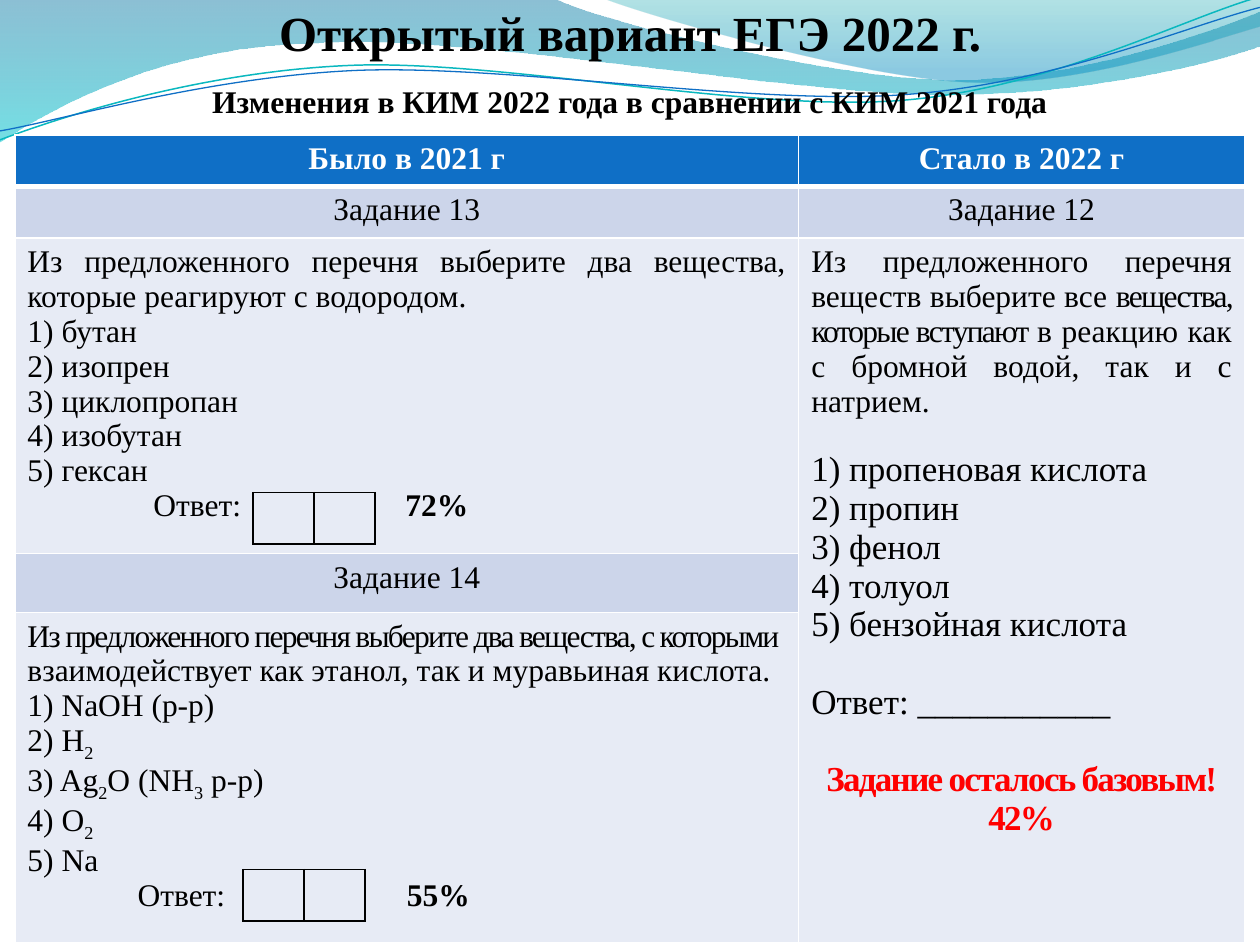
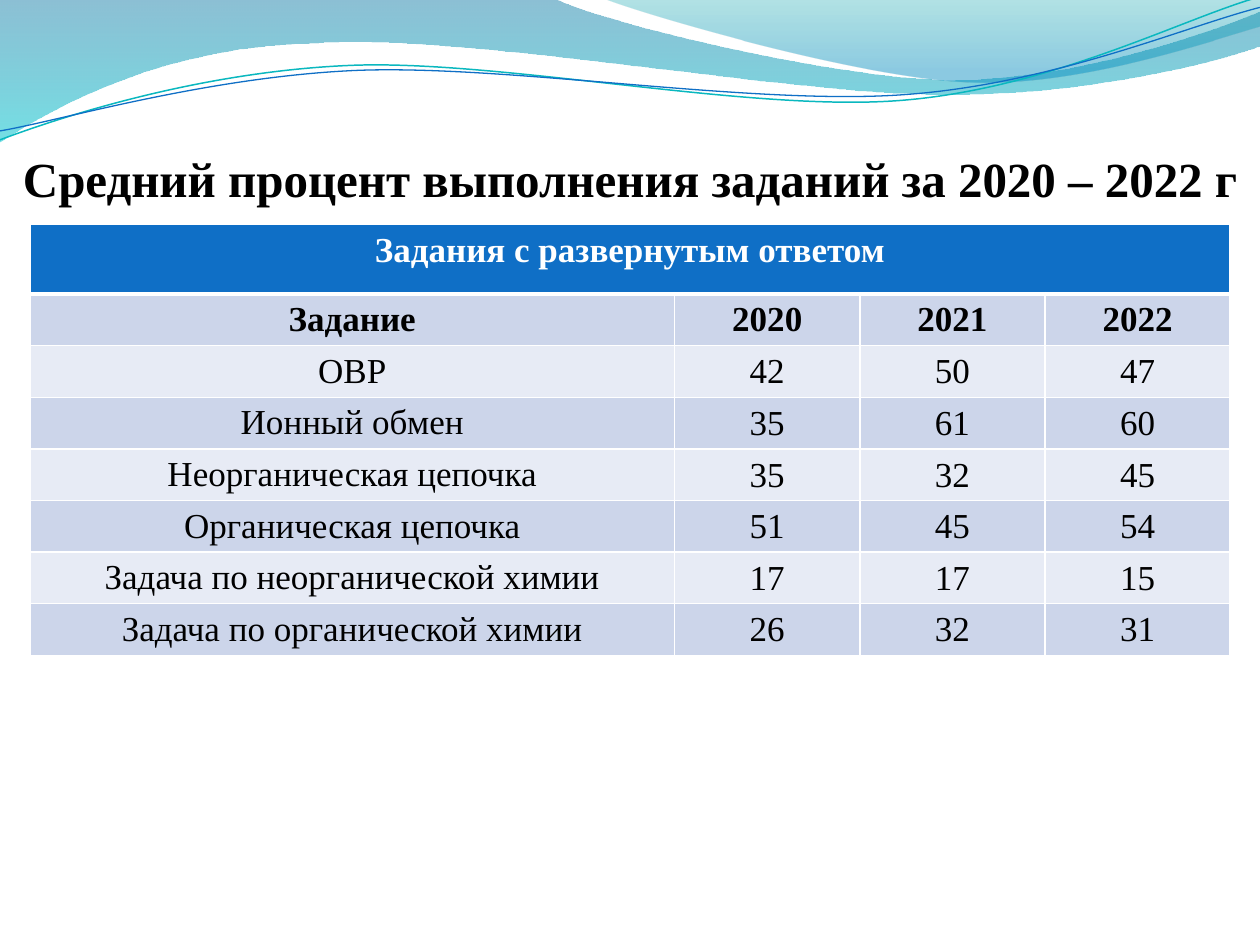
from dataclasses import dataclass

from lxml import etree
from pptx import Presentation
from pptx.dml.color import RGBColor
from pptx.enum.text import MSO_ANCHOR, MSO_AUTO_SIZE, PP_ALIGN
from pptx.oxml.ns import qn
from pptx.util import Cm, Pt

CENTER, JUSTIFY, LEFT = PP_ALIGN.CENTER, PP_ALIGN.JUSTIFY, PP_ALIGN.LEFT
TOP, MIDDLE = MSO_ANCHOR.TOP, MSO_ANCHOR.MIDDLE
NO_AUTOSIZE = MSO_AUTO_SIZE.NONE

BLACK = RGBColor(0x00, 0x00, 0x00)
WHITE = RGBColor(0xFF, 0xFF, 0xFF)
RED = RGBColor(0xFF, 0x00, 0x00)
HEADER_BLUE = RGBColor(0x0F, 0x6F, 0xC6)
BAND_DARK = RGBColor(0xCC, 0xD5, 0xEA)
BAND_LIGHT = RGBColor(0xE7, 0xEB, 0xF5)
WAVE_TEAL = RGBColor(0x0A, 0xB8, 0xBF)
FONT = "Times New Roman"
TITLE_ONLY = 5
SLIDE_WIDTH, SLIDE_HEIGHT = 25.4, 19.05

SUB = {"baseline": "-25000"}
TIGHT = {"spc": "-100"}
BOLD = {"b": "1"}

WAVE_FILLS = [
    ([(0, 0), (11.18, -0.03), (12.09, 0.43, 16.87, 1.6, 19.25, 1.6),
      (21.67, 1.6, 24.33, 0.66, 25.4, 0.23), (25.43, 0.91),
      (24.97, 1.12, 22.1, 1.93, 18.95, 1.9), (15.8, 1.9, 9.7, 0.71, 6.53, 0.86),
      (3.28, 0.91, 1.17, 2.11, -0.03, 2.87), (0, 0)],
     [(0, RGBColor(0x00, 0x74, 0xA1), 45), (1, RGBColor(0x00, 0xC6, 0xCF), 55)]),
    ([(12.17, -0.03), (12.93, 0.28, 17.32, 1.57, 19.53, 1.65),
      (21.74, 1.75, 24.41, 0.81, 25.4, 0.53), (25.4, 0), (12.17, -0.03)],
     [(0, RGBColor(0x00, 0xA1, 0xA9), 30), (0.8, RGBColor(0x00, 0x8B, 0xBF), 45)]),
]
WAVE_LINES = [
    ([(0, 2.82), (1.22, 2.36, 4.01, 1.45, 7.04, 1.32),
      (10.03, 1.19, 15.06, 2.26, 18.11, 2.03),
      (21.16, 1.8, 23.83, 0.38, 25.35, -0.05)], WAVE_TEAL, 0.85),
    ([(0, 2.64), (1.19, 2.44, 4.17, 1.55, 7.19, 1.42),
      (10.24, 1.3, 15.16, 2.13, 18.21, 1.91),
      (21.23, 1.7, 23.9, 0.53, 25.4, 0.15)], HEADER_BLUE, 0.75),
]

SCORES = [
    ("Задание", "2020", "2021", "2022"),
    ("ОВР", 42, 50, 47),
    ("Ионный обмен", 35, 61, 60),
    ("Неорганическая цепочка", 35, 32, 45),
    ("Органическая цепочка", 51, 45, 54),
    ("Задача по неорганической химии", 17, 17, 15),
    ("Задача по органической химии", 26, 32, 31),
]


@dataclass
class Box:
    """Region of a slide in centimetres."""
    left: float
    top: float
    width: float
    height: float

    def emu(self):
        """Return the four lengths for python-pptx."""
        return Cm(self.left), Cm(self.top), Cm(self.width), Cm(self.height)


@dataclass
class Line:
    """Paragraph made of plain strings and (text, attributes) runs."""
    runs: list
    align: PP_ALIGN = LEFT
    size: float = 18
    bold: bool = False
    color: RGBColor = BLACK
    before: float = 0
    after: float = 0
    tabs: tuple = ()


def write(frame, lines):
    """Fill a text frame with lines, run by run."""
    for index, line in enumerate(lines):
        paragraph = frame.add_paragraph() if index else frame.paragraphs[0]
        paragraph.alignment = line.align
        paragraph.space_before = Pt(line.before)
        paragraph.space_after = Pt(line.after)
        if line.tabs:
            stops = etree.SubElement(paragraph._p.get_or_add_pPr(), qn("a:tabLst"))
            for stop in line.tabs:
                etree.SubElement(stops, qn("a:tab"), pos=str(Cm(stop)), algn="l")
        for part in line.runs:
            text, attributes = (part, {}) if isinstance(part, str) else part
            run = paragraph.add_run()
            run.text = text
            run.font.name = FONT
            run.font.size = Pt(line.size)
            run.font.bold = line.bold
            run.font.color.rgb = line.color
            for key, value in attributes.items():
                run.font._element.set(key, value)


def add_outline(slide, segments, close):
    """Draw a wave whose six-number segments are cubic curves."""
    knots = [(Cm(x), Cm(y)) for segment in segments
             for x, y in zip(segment[::2], segment[1::2])]
    builder = slide.shapes.build_freeform(*knots[0])
    builder.add_line_segments(knots[1:], close=close)
    wave = builder.convert_to_shape()
    wave.shadow.inherit = False
    steps = iter(list(wave.element.iter(qn("a:lnTo"))))
    for segment in segments[1:]:
        first = next(steps)
        if len(segment) == 6:
            curve = etree.Element(qn("a:cubicBezTo"))
            first.addprevious(curve)
            for step in (first, next(steps), next(steps)):
                curve.append(step[0])
                step.getparent().remove(step)
    return wave


def add_waves(slide, master):
    """Draw the wave band and hand it to the master behind its placeholders."""
    waves = []
    for segments, stops in WAVE_FILLS:
        wave = add_outline(slide, segments, True)
        wave.line.fill.background()
        wave.fill.gradient()
        wave.fill.gradient_angle = 270
        for stop, (position, color, _) in zip(wave.fill.gradient_stops, stops):
            stop.position = position
            stop.color.rgb = color
        for color, (_, _, opacity) in zip(wave.element.iter(qn("a:srgbClr")), stops):
            etree.SubElement(color, qn("a:alpha"), val=str(opacity * 1000))
        waves.append(wave)
    for segments, color, width in WAVE_LINES:
        wave = add_outline(slide, segments, False)
        wave.fill.background()
        wave.line.color.rgb = color
        wave.line.width = Pt(width)
        waves.append(wave)
    for index, wave in enumerate(waves):
        wave.element.nvSpPr.cNvPr.set("id", str(100 + index))
        master.shapes.element.insert(2 + index, wave.element)


def set_title(slide, box, text):
    """Move and format the title placeholder."""
    title = slide.shapes.title
    title.left, title.top, title.width, title.height = box.emu()
    frame = title.text_frame
    frame.word_wrap = True
    frame.auto_size = NO_AUTOSIZE
    frame.vertical_anchor = TOP
    write(frame, [Line([text], CENTER, 28, True)])


def add_subtitle(slide, box, text):
    """Add the centred line under the title."""
    frame = slide.shapes.add_textbox(*box.emu()).text_frame
    frame.word_wrap = True
    write(frame, [Line([text], CENTER, bold=True, after=12)])


def set_borders(cell, color, top=1, bottom=1):
    """Give a cell solid borders of the given point widths."""
    properties = cell._tc.get_or_add_tcPr()
    for side, width in (("L", 1), ("R", 1), ("T", top), ("B", bottom)):
        border = etree.SubElement(properties, qn(f"a:ln{side}"), w=str(Pt(width)))
        fill = etree.SubElement(border, qn("a:solidFill"))
        etree.SubElement(fill, qn("a:srgbClr"), val=str(color))


def add_grid(slide, box, widths, heights):
    """Add a table with the given column widths and row heights."""
    table = slide.shapes.add_table(len(heights), len(widths), *box.emu()).table
    table.first_row = table.horz_banding = False
    for column, width in zip(table.columns, widths):
        column.width = Cm(width)
    for row, height in zip(table.rows, heights):
        row.height = Cm(height)
    return table


def add_banded_table(slide, box, widths, heights):
    """Add a table with a blue header and alternating bands."""
    table = add_grid(slide, box, widths, heights)
    for index, row in enumerate(table.rows):
        for cell in row.cells:
            set_borders(cell, WHITE, 3 if index == 1 else 1, 3 if index == 0 else 1)
            cell.fill.solid()
            band = BAND_DARK if index % 2 else BAND_LIGHT
            cell.fill.fore_color.rgb = band if index else HEADER_BLUE
    return table


def heading(text, size=18, bold=False, color=BLACK):
    """Return a centred table line with space around it."""
    return Line([text], CENTER, size, bold, color, 6, 6)


def add_answer_boxes(slide, box):
    """Add the two empty squares for an answer."""
    table = add_grid(slide, box, [box.width / 2] * 2, [box.height])
    for cell in table.rows[0].cells:
        set_borders(cell, BLACK)
        cell.fill.background()


def add_comparison(slide, box):
    """Compare the tasks of 2021 with the task of 2022."""
    table = add_banded_table(slide, box, [15.8, box.width - 15.8],
                             [1.04, 1.04, 6.36, 1.19, 6.65])
    table.cell(2, 1).merge(table.cell(4, 1))
    hydrogen = [["Из предложенного перечня выберите два вещества, которые реагируют с водородом."],
                ["1) бутан"], ["2) изопрен"], ["3) циклопропан"], ["4) изобутан"], ["5) гексан"]]
    ethanol = [[("Из предложенного перечня выберите два вещества, с которыми ", TIGHT),
                "взаимодействует как этанол, так и муравьиная кислота."],
               ["1) NaOH (р-р)"], ["2) H", ("2", SUB)],
               ["3) Ag", ("2", SUB), "O (NH", ("3", SUB), " р-р)"],
               ["4) O", ("2", SUB)], ["5) Na"]]
    bromine = ["Из предложенного перечня веществ выберите все ",
               ("вещества, которые вступают ", TIGHT),
               "в реакцию как с бромной водой, так и с натрием."]
    options = ["2) пропин", "3) фенол", "4) толуол", "5) бензойная кислота"]
    contents = {
        (0, 0): [heading("Было в 2021 г", bold=True, color=WHITE)],
        (0, 1): [heading("Стало в 2022 г", bold=True, color=WHITE)],
        (1, 0): [heading("Задание 13")],
        (1, 1): [heading("Задание 12")],
        (2, 0): [Line(runs, JUSTIFY) for runs in hydrogen]
        + [Line(["\tОтвет:\t", ("72%", BOLD)], JUSTIFY, tabs=(2.54, 7.62))],
        (2, 1): [Line(bromine, JUSTIFY, before=6, after=6),
                 Line(["1) пропеновая кислота"], JUSTIFY, 20, before=12)]
        + [Line([option], JUSTIFY, 20) for option in options]
        + [Line(["Ответ: ___________"], JUSTIFY, 20, before=22),
           Line([("Задание осталось базовым!", TIGHT)], CENTER, 20, True, RED, 22),
           Line([("42%", TIGHT)], CENTER, 20, True, RED)],
        (3, 0): [Line(["Задание 14"], CENTER)],
        (4, 0): [Line(runs) for runs in ethanol]
        + [Line(["\tОтвет:\t", ("55%", BOLD)], tabs=(2.22, 7.65))],
    }
    for (row, column), lines in contents.items():
        write(table.cell(row, column).text_frame, lines)
    for left, top in ((4.8, 7.21), (4.6, 14.81)):
        add_answer_boxes(slide, Box(box.left + left, box.top + top, 2.46, 1.04))


def add_scores(slide, box):
    """Tabulate the average scores by task and year."""
    task_width = 13
    year_width = (box.width - task_width) / 3
    table = add_banded_table(slide, box, [task_width] + [year_width] * 3,
                             [1.4] + [1.04] * len(SCORES))
    table.cell(0, 0).merge(table.cell(0, 3))
    write(table.cell(0, 0).text_frame,
          [heading("Задания с развернутым ответом", 20, True, WHITE)])
    for row, values in enumerate(SCORES, 1):
        for column, value in enumerate(values):
            cell = table.cell(row, column)
            if row > 1 and column:
                cell.vertical_anchor = MIDDLE
                cell.margin_left = cell.margin_right = cell.margin_top = Cm(0.02)
                cell.margin_bottom = Cm(0)
                line = Line([str(value)], CENTER, 20)
            else:
                line = heading(value, 20, row == 1)
            write(cell.text_frame, [line])


def main():
    """Build and save both slides."""
    deck = Presentation()
    deck.slide_width, deck.slide_height = Cm(SLIDE_WIDTH), Cm(SLIDE_HEIGHT)
    layout = deck.slide_layouts[TITLE_ONLY]

    changes = deck.slides.add_slide(layout)
    add_waves(changes, deck.slide_master)
    set_title(changes, Box(0, -0.08, SLIDE_WIDTH, 1.45), "Открытый вариант ЕГЭ 2022 г.")
    add_subtitle(changes, Box(0, 1.52, SLIDE_WIDTH, 1.02),
                 "Изменения в КИМ 2022 года в сравнении с КИМ 2021 года")
    add_comparison(changes, Box(0.3, 2.72, 24.79, 16.28))

    results = deck.slides.add_slide(layout)
    set_title(results, Box(0, 2.87, SLIDE_WIDTH, 1.45),
              "Средний процент выполнения заданий за 2020 – 2022 г")
    add_scores(results, Box(0.6, 4.53, 24.2, 8.68))
    deck.save("out.pptx")


if __name__ == "__main__":
    main()
